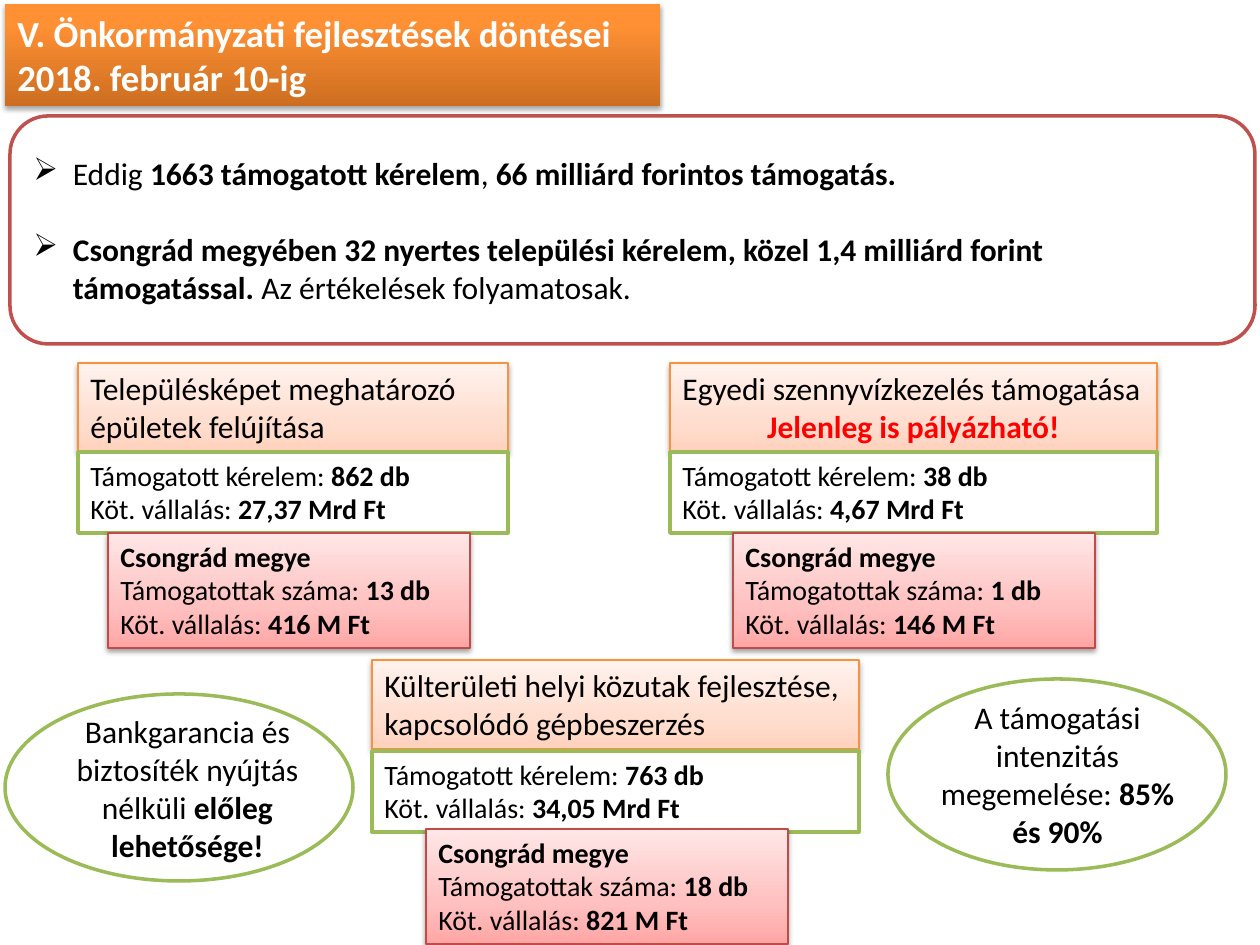
from lxml import etree
from pptx import Presentation
from pptx.dml.color import RGBColor
from pptx.enum.shapes import MSO_SHAPE
from pptx.enum.text import MSO_ANCHOR, MSO_AUTO_SIZE, PP_ALIGN
from pptx.oxml.ns import qn
from pptx.util import Emu, Pt

RECTANGLE, ROUNDED, OVAL = MSO_SHAPE.RECTANGLE, MSO_SHAPE.ROUNDED_RECTANGLE, MSO_SHAPE.OVAL
LEFT, CENTER = PP_ALIGN.LEFT, PP_ALIGN.CENTER
TOP, MIDDLE = MSO_ANCHOR.TOP, MSO_ANCHOR.MIDDLE
FIT_SHAPE, NO_FIT = MSO_AUTO_SIZE.SHAPE_TO_FIT_TEXT, MSO_AUTO_SIZE.NONE
PX = 914400 / 126

BLACK = RGBColor(0x00, 0x00, 0x00)
WHITE = RGBColor(0xFF, 0xFF, 0xFF)
RED = RGBColor(0xFF, 0x00, 0x00)
BRICK = RGBColor(0xC0, 0x50, 0x4D)
GREEN = RGBColor(0x9B, 0xBB, 0x59)
ORANGE = RGBColor(0xF6, 0x92, 0x40)
ROSE = RGBColor(0xBF, 0x4C, 0x48)

# Gradient stops run from the bottom edge to the top: (percent, colour)
TITLE_STOPS = [(0, "CC6E20"), (80, "FF9034"), (100, "FF9136")]
PEACH_STOPS = [(0, "FFD2BD"), (35, "FFDED0"), (100, "FFF2ED")]
PINK_STOPS = [(0, "FFA6A5"), (35, "FFC0BF"), (100, "FFE7E7")]

presentation = Presentation()
presentation.slide_width = Emu(round(1260 * PX))
presentation.slide_height = Emu(round(945 * PX))
slide = presentation.slides.add_slide(presentation.slide_layouts[6])


def add_box(kind, box, stops=None, line=None, width=2, alpha=38, distance=1.6):
    """Add a white box, or a gradient box with a soft shadow when stops are given."""
    shape = slide.shapes.add_shape(kind, *[Emu(round(value * PX)) for value in box])
    shape.shadow.inherit = False
    if line is None:
        shape.line.fill.background()
    else:
        shape.line.color.rgb = line
        shape.line.width = Pt(width)
    if stops is None:
        shape.fill.solid()
        shape.fill.fore_color.rgb = WHITE
        return shape

    shape.fill.gradient()
    shape.fill.gradient_angle = 90
    properties = shape.element.spPr
    stop_list = properties.find(qn("a:gradFill")).find(qn("a:gsLst"))
    for old_stop in list(stop_list):
        stop_list.remove(old_stop)
    for percent, color in stops:
        stop = etree.SubElement(stop_list, qn("a:gs"), pos=str(percent * 1000))
        etree.SubElement(stop, qn("a:srgbClr"), val=color)
    shadow = etree.SubElement(
        properties.find(qn("a:effectLst")), qn("a:outerShdw"), blurRad=str(Pt(3.1)),
        dist=str(Pt(distance)), dir="5400000", rotWithShape="0")
    shadow_color = etree.SubElement(shadow, qn("a:srgbClr"), val="000000")
    etree.SubElement(shadow_color, qn("a:alpha"), val=str(alpha * 1000))
    return shape


def write(shape, lines, size, color=BLACK, align=LEFT, anchor=TOP, fit=FIT_SHAPE, bullet=None):
    """Write one paragraph per line; asterisks switch bold on and off."""
    frame = shape.text_frame
    for name, value in {"word_wrap": True, "auto_size": fit, "vertical_anchor": anchor}.items():
        setattr(frame, name, value)
    for index, line in enumerate(lines):
        paragraph = frame.paragraphs[0] if index == 0 else frame.add_paragraph()
        paragraph.alignment = align
        if bullet:
            if index:
                paragraph.space_before = Pt(size * 1.2)
            properties = paragraph._p.get_or_add_pPr()
            properties.set("marL", "285750")
            properties.set("indent", "-285750")
            etree.SubElement(properties, qn("a:buChar"), char=bullet)
        for part, text in enumerate(line.split("*")):
            if text:
                run = paragraph.add_run()
                run.text = text
                font_format = {"name": "Calibri", "size": Pt(size), "bold": part % 2 == 1}
                for name, value in font_format.items():
                    setattr(run.font, name, value)
                run.font.color.rgb = color
    return frame


title = add_box(RECTANGLE, (5, 4, 655, 102), TITLE_STOPS, alpha=35, distance=1.8)
write(title, ["*V. Önkormányzati fejlesztések döntései*", "*2018. február 10-ig*"],
      21, WHITE, anchor=MIDDLE)

summary = add_box(ROUNDED, (10, 116, 1245, 228), line=BRICK)
write(summary, [
    "Eddig *1663 támogatott kérelem*, *66 milliárd forintos támogatás.*",
    "*Csongrád megyében 32 nyertes települési kérelem, közel 1,4 milliárd forint "
    "támogatással. *Az értékelések folyamatosak.",
], 18, anchor=MIDDLE, fit=NO_FIT, bullet="➢")

# Heading, left, width, left of county box, tops of the three boxes, national and county figures
programmes = [
    (["Településképet meghatározó", "épületek felújítása"],
     78, 430, 108, (363, 452, 533), ("862", "27,37"), ("13", "416")),
    (["Egyedi szennyvízkezelés támogatása", "*Jelenleg is pályázható!*"],
     670, 487, 733, (363, 452, 533), ("38", "4,67"), ("1", "146")),
    (["Külterületi helyi közutak fejlesztése, kapcsolódó gépbeszerzés"],
     372, 487, 426, (660, 751, 829), ("763", "34,05"), ("18", "821")),
]
for heading, left, width, county_left, tops, national, county in programmes:
    header = add_box(RECTANGLE, (left, tops[0], width, 89), PEACH_STOPS, ORANGE, 0.75)
    header_frame = write(header, heading, 18)
    if "*" in heading[-1]:
        call = header_frame.paragraphs[-1]
        call.alignment = CENTER
        call.runs[0].font.color.rgb = RED

    national_box = add_box(RECTANGLE, (left, tops[1], width, 81), line=GREEN)
    write(national_box, [f"Támogatott kérelem: *{national[0]} db*",
                         f"Köt. vállalás: *{national[1]} Mrd Ft*"], 16)

    county_box = add_box(RECTANGLE, (county_left, tops[2], 362, 115), PINK_STOPS, ROSE, 0.75)
    write(county_box, ["*Csongrád megye*", f"Támogatottak száma: *{county[0]} db*",
                       f"Köt. vállalás: *{county[1]} M Ft*"], 16)

notes = [
    ((888, 679, 338, 191), (914, 692, 287, 165),
     "A támogatási intenzitás megemelése: *85% és 90%*"),
    ((5, 694, 348, 187), (44, 706, 287, 165),
     "Bankgarancia és biztosíték nyújtás nélküli *előleg lehetősége!*"),
]
for oval, text_area, text in notes:
    add_box(OVAL, oval, line=GREEN)
    text_box = slide.shapes.add_textbox(*[Emu(round(value * PX)) for value in text_area])
    write(text_box, [text], 18, align=CENTER)

presentation.save("out.pptx")
